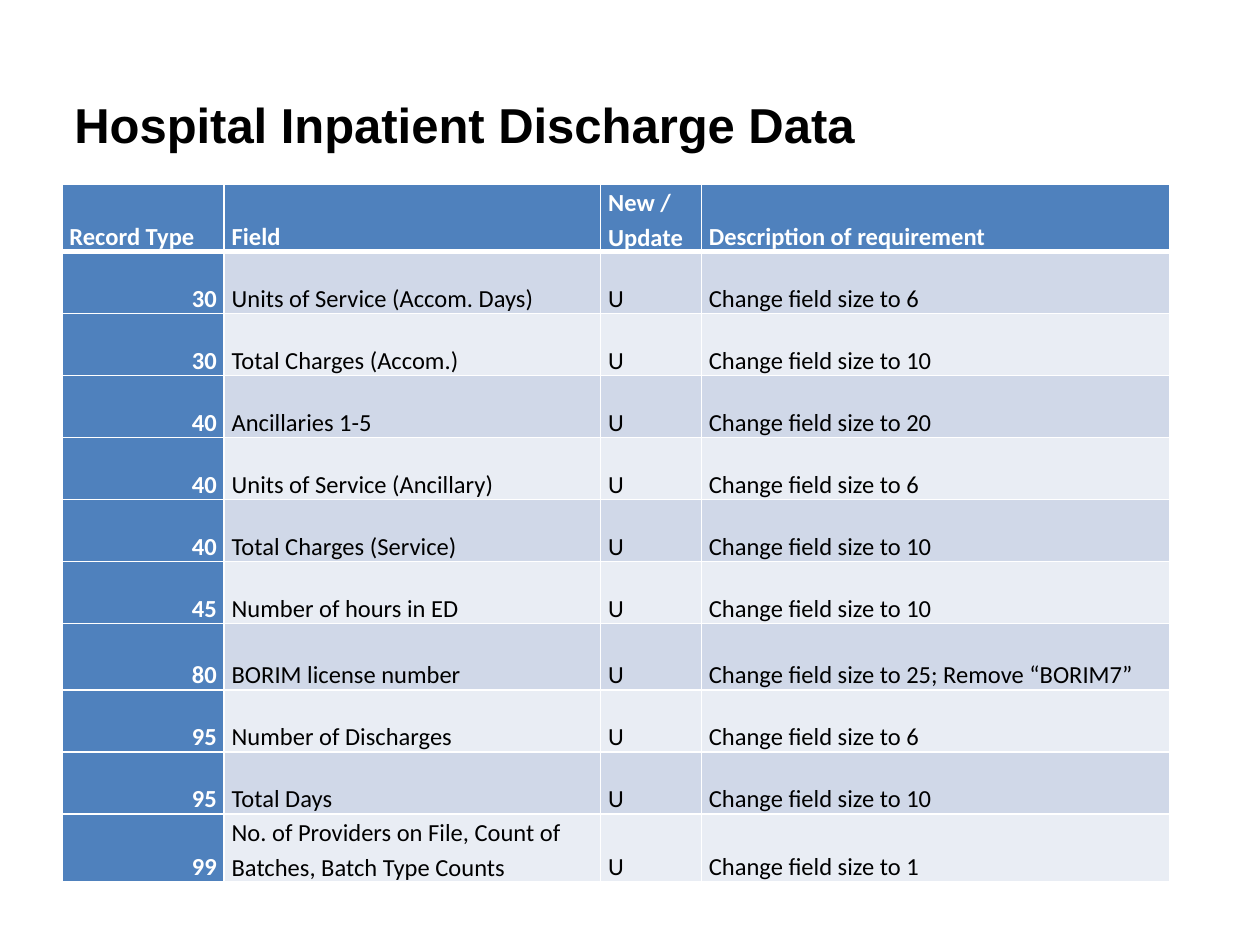
import pptx
import pptx.dml.color
import pptx.enum.text
import pptx.oxml.ns
import pptx.util
from lxml import etree
from pptx.util import Cm

WHITE, BLACK, BLUE = "FFFFFF", "000000", "4F81BD"
BANDS = ["D0D8E8", "E9EDF4"]
COL_WIDTHS = [3.27, 7.59, 2.03, 9.44]
ROW_HEIGHT, TALL_ROW_HEIGHT = 1.25, 1.34
TALL_ROWS = {0, 7, 10}
HEADER = ("Record Type", "Field", "New / Update", "Description of requirement")
RECORDS = [
    ("30", "Units of Service (Accom. Days)", "6"),
    ("30", "Total Charges (Accom.)", "10"),
    ("40", "Ancillaries 1-5", "20"),
    ("40", "Units of Service (Ancillary)", "6"),
    ("40", "Total Charges (Service)", "10"),
    ("45", "Number of hours in ED", "10"),
    ("80", "BORIM license number", "25; Remove “BORIM7”"),
    ("95", "Number of Discharges", "6"),
    ("95", "Total Days", "10"),
    ("99", "No. of Providers on File, Count of Batches, Batch Type Counts", "1"),
]


def rgb(value):
    return pptx.dml.color.RGBColor.from_string(value)


def set_font(p, name, size, color, bold):
    p.font.name = name
    p.font.size = pptx.util.Pt(size)
    p.font.bold = bold
    p.font.color.rgb = rgb(color)


def add_title(s, text):
    box = s.shapes.add_textbox(Cm(1.25), Cm(0.74), Cm(22.33), Cm(3.53))
    tf = box.text_frame
    tf.word_wrap = True
    tf.vertical_anchor = pptx.enum.text.MSO_ANCHOR.MIDDLE
    p = tf.paragraphs[0]
    p.text = text
    set_font(p, "Arial", 28, BLACK, True)


def add_border(cell, side, width):
    ln = etree.SubElement(cell._tc.get_or_add_tcPr(), pptx.oxml.ns.qn(f"a:ln{side}"),
                          w=str(pptx.util.Pt(width)))
    fill = etree.SubElement(ln, pptx.oxml.ns.qn("a:solidFill"))
    etree.SubElement(fill, pptx.oxml.ns.qn("a:srgbClr"), val=WHITE)


def fill_cell(cell, text, row, col):
    heading = row == 0 or col == 0
    widths = {"L": 1, "R": 1, "T": 3 if row == 1 else 1, "B": 3 if row == 0 else 1}
    for side, width in widths.items():
        add_border(cell, side, width)
    cell.fill.solid()
    cell.fill.fore_color.rgb = rgb(BLUE if heading else BANDS[(row - 1) % 2])
    cell.margin_left = cell.margin_right = Cm(0.15)
    cell.margin_top = cell.margin_bottom = 0
    cell.vertical_anchor = pptx.enum.text.MSO_ANCHOR.BOTTOM
    p = cell.text_frame.paragraphs[0]
    p.text = text
    p.line_spacing = 1.15
    if col == 0 and row > 0:
        p.alignment = pptx.enum.text.PP_ALIGN.RIGHT
    set_font(p, "Calibri", 14, WHITE if heading else BLACK, heading)


def add_requirements_table(s):
    rows = [HEADER] + [(record, field, "U", f"Change field size to {size}")
                       for record, field, size in RECORDS]
    heights = [TALL_ROW_HEIGHT if i in TALL_ROWS else ROW_HEIGHT for i in range(len(rows))]
    table = s.shapes.add_table(len(rows), len(HEADER), Cm(1.25), Cm(3.71),
                               Cm(sum(COL_WIDTHS)), Cm(sum(heights))).table
    for column, width in zip(table.columns, COL_WIDTHS):
        column.width = Cm(width)
    for i, (texts, height) in enumerate(zip(rows, heights)):
        table.rows[i].height = Cm(height)
        for j, text in enumerate(texts):
            fill_cell(table.cell(i, j), text, i, j)


def main():
    prs = pptx.Presentation()
    prs.slide_width, prs.slide_height = Cm(25.4), Cm(19.05)
    s = prs.slides.add_slide(prs.slide_layouts[6])
    add_title(s, "Hospital Inpatient Discharge Data")
    add_requirements_table(s)
    prs.save("out.pptx")


if __name__ == "__main__":
    main()
